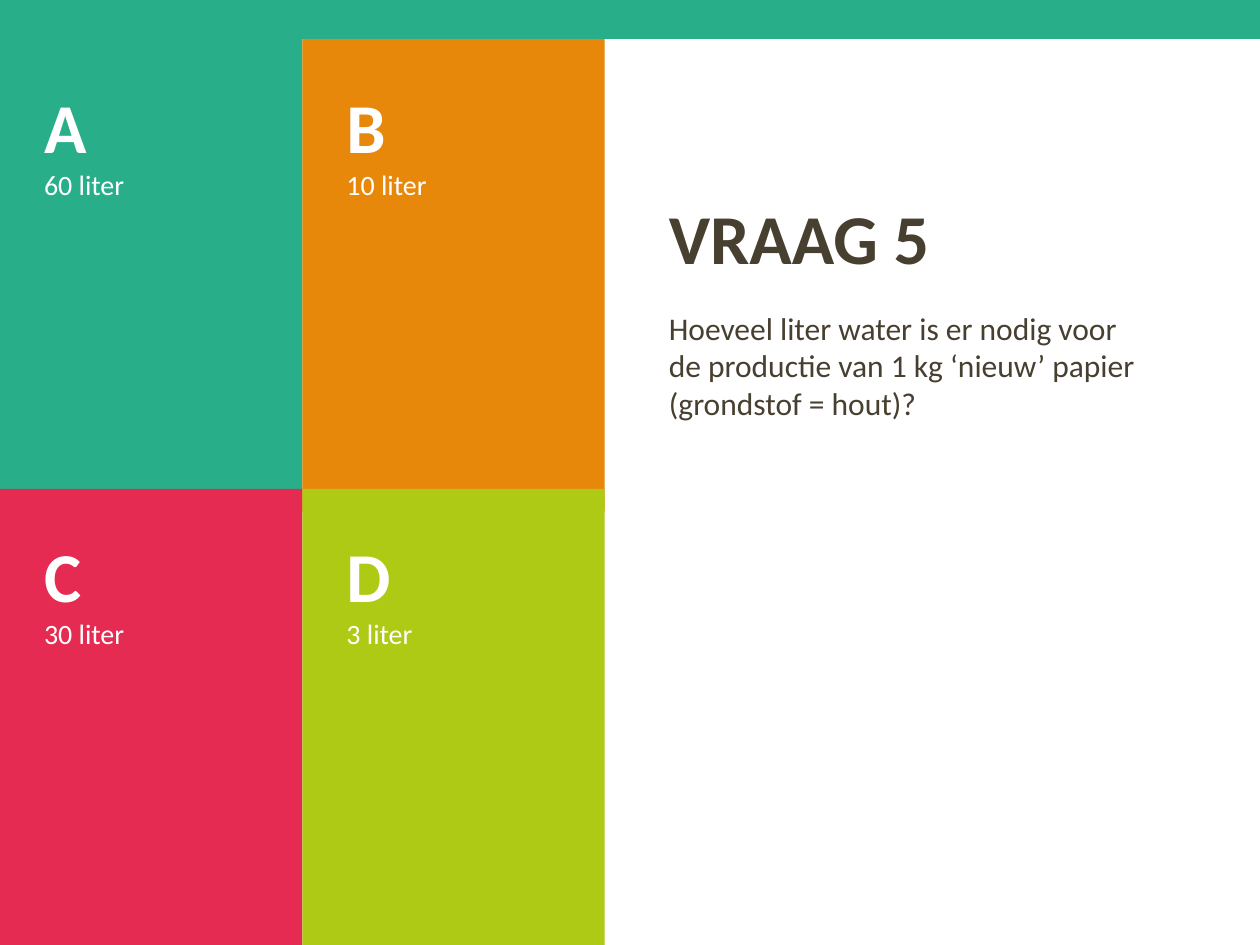
from pptx import Presentation
from pptx.dml.color import RGBColor
from pptx.enum.shapes import MSO_SHAPE
from pptx.enum.text import MSO_ANCHOR, PP_ALIGN
from pptx.util import Inches, Pt

GREEN, ORANGE, RED, LIME = "28AF8A", "E8880A", "E52B51", "AFCA15"
WHITE, BROWN = "FFFFFF", "473F30"


def add_run(paragraph, text, size, color, bold=False):
    paragraph.alignment = PP_ALIGN.LEFT
    run = paragraph.add_run()
    run.text = text
    run.font.name = "Calibri"
    run.font.size = Pt(size)
    run.font.bold = bold
    run.font.color.rgb = RGBColor.from_string(color)


def add_block(left, top, width, height, color):
    block = slide.shapes.add_shape(
        MSO_SHAPE.RECTANGLE, Inches(left), Inches(top), Inches(width), Inches(height))
    block.shadow.inherit = False
    block.fill.solid()
    block.fill.fore_color.rgb = RGBColor.from_string(color)
    block.line.fill.background()
    return block


prs = Presentation()
prs.slide_width, prs.slide_height = Inches(10), Inches(7.5)
slide = prs.slides.add_slide(prs.slide_layouts[6])

# Question
title = slide.shapes.add_textbox(
    Inches(5.21), Inches(1.31), Inches(4.28), Inches(0.95)).text_frame
title.word_wrap = True
title.vertical_anchor = MSO_ANCHOR.BOTTOM
add_run(title.paragraphs[0], "VRAAG 5", 40, BROWN, bold=True)

question = slide.shapes.add_textbox(
    Inches(5.21), Inches(2.4), Inches(3.98), Inches(3.91)).text_frame
question.word_wrap = True
question.paragraphs[0].space_before = Pt(3.6)
add_run(question.paragraphs[0],
        "Hoeveel liter water is er nodig voor de productie van 1 kg "
        "‘nieuw’ papier (grondstof = hout)?", 18, BROWN)

# Answers in a two by two grid; the lower row overlaps the upper one
ANSWER_WIDTH = 2.4
rows = [
    (0.31, 3.75, [("A", "60 liter", GREEN), ("B", "10 liter", ORANGE)]),
    (3.88, 3.62, [("C", "30 liter", RED), ("D", "3 liter", LIME)]),
]
for top, height, answers in rows:
    for column, (letter, amount, color) in enumerate(answers):
        answer = add_block(column * ANSWER_WIDTH, top, ANSWER_WIDTH, height, color).text_frame
        answer.word_wrap = True
        answer.vertical_anchor = MSO_ANCHOR.TOP
        answer.margin_left = answer.margin_right = Inches(0.35)
        answer.margin_top = answer.margin_bottom = Inches(0.35)
        add_run(answer.paragraphs[0], letter, 40, WHITE, bold=True)
        add_run(answer.add_paragraph(), amount, 16, WHITE)

# Top band
add_block(0, 0, 10.03, 0.31, GREEN)

prs.save("out.pptx")
